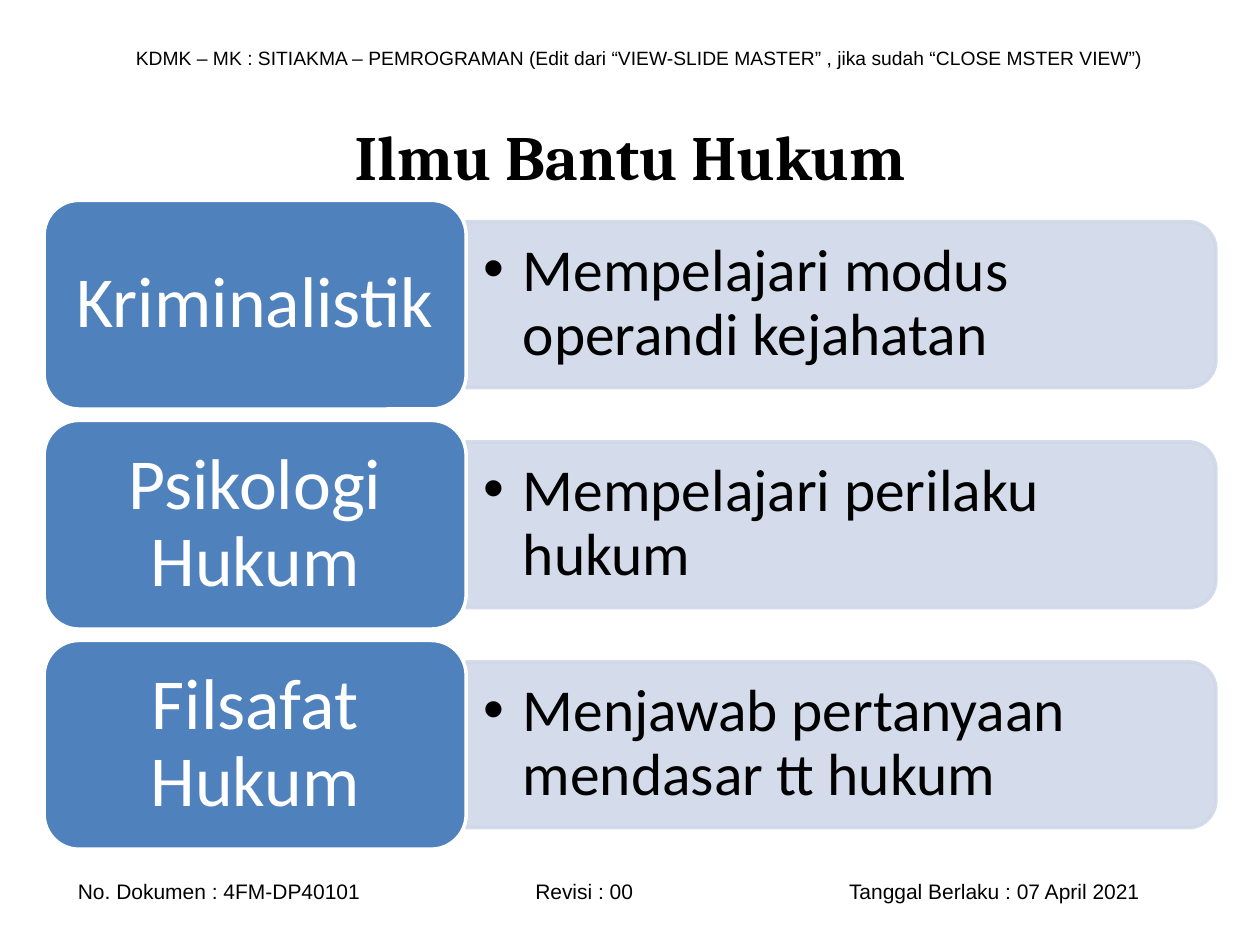
from dataclasses import dataclass

from lxml.etree import SubElement
from pptx import Presentation
from pptx.dml.color import RGBColor
from pptx.enum.shapes import MSO_SHAPE
from pptx.enum.text import MSO_ANCHOR, PP_ALIGN
from pptx.oxml.ns import qn
from pptx.util import Inches, Pt


@dataclass(frozen=True)
class Theme:
    """Colours, fonts and type sizes of the slide."""
    ink: str = "000000"
    paper: str = "FFFFFF"
    label: str = "4F81BD"
    panel: str = "D0D8E8"
    panel_alpha: int = 90
    plain: str = "Arial"
    heading: str = "Cambria"
    body: str = "Calibri"
    header_size: int = 11
    footer_size: int = 12
    title_size: int = 36
    detail_size: int = 34
    label_size: int = 41


THEME = Theme()


def write_text(s, text, *, font, size, color=THEME.ink, bold=False, align=PP_ALIGN.LEFT,
               margins=(0.1, 0.05), spacing=None, bullet=None, tabs=()):
    """Write one formatted paragraph, vertically centred, into a shape."""
    tf = s.text_frame
    tf.word_wrap = True
    tf.vertical_anchor = MSO_ANCHOR.MIDDLE
    tf.margin_left = tf.margin_right = Inches(margins[0])
    tf.margin_top = tf.margin_bottom = Inches(margins[1])
    p = tf.paragraphs[0]
    pPr = p._p.get_or_add_pPr()
    if bullet:
        pPr.set("marL", str(Inches(bullet)))
        pPr.set("indent", str(-Inches(bullet)))
        SubElement(pPr, qn("a:buFont"), typeface=THEME.plain)
        SubElement(pPr, qn("a:buChar"), char="•")
    if tabs:
        tab_list = SubElement(pPr, qn("a:tabLst"))
        for pos in tabs:
            SubElement(tab_list, qn("a:tab"), pos=str(Inches(pos)), algn="l")
    p.alignment = align
    if spacing:
        p.line_spacing = spacing
    r = p.add_run()
    r.text = text
    r.font.name, r.font.size, r.font.bold = font, Pt(size), bold
    r.font.color.rgb = RGBColor.from_string(color)


def add_text(slide, box, text, **fmt):
    """Add a text box at left, top, width, height in inches."""
    s = slide.shapes.add_textbox(*map(Inches, box))
    write_text(s, text, **fmt)


def add_block(slide, kind, box, fill, line, alpha=None):
    """Add a filled, outlined preset shape, optionally translucent."""
    s = slide.shapes.add_shape(kind, *map(Inches, box))
    s.shadow.inherit = False
    s.fill.solid()
    s.fill.fore_color.rgb = RGBColor.from_string(fill)
    s.line.color.rgb = RGBColor.from_string(line)
    s.line.width = Pt(2)
    if alpha:
        for clr in s._element.spPr.iter(qn("a:srgbClr")):
            SubElement(clr, qn("a:alpha"), val=str(alpha * 1000))
    return s


def add_panel(slide, box, text):
    """Add a panel rounded on its right side, with a bulleted detail."""
    left, top, width, height = box
    shift = (width - height) / 2
    s = add_block(slide, MSO_SHAPE.ROUND_2_SAME_RECTANGLE,
                  (left + shift, top - shift, height, width),
                  THEME.panel, THEME.panel, THEME.panel_alpha)
    s.rotation = 90
    add_text(slide, (left, top + 0.06, width - 0.07, height - 0.13), text,
             font=THEME.body, size=THEME.detail_size, margins=(0.14, 0.07),
             spacing=0.9, bullet=0.31)


def add_row(slide, box, label, detail):
    """Add a label block and, beside it, its detail panel."""
    left, top, width, height = box
    label_width, inset = 3.35, 0.17
    add_panel(slide, (left + label_width, top + inset, width - label_width,
                      height - 2 * inset), detail)
    s = add_block(slide, MSO_SHAPE.ROUNDED_RECTANGLE, (left, top, label_width, height),
                  THEME.label, THEME.paper)
    write_text(s, label, font=THEME.body, size=THEME.label_size, color=THEME.paper,
               align=PP_ALIGN.CENTER, margins=(0.17, 0.09), spacing=0.9)


def add_rows(slide, box, rows, gap=0.09):
    """Stack the rows evenly in the box."""
    left, top, width, height = box
    row_height = (height - gap * (len(rows) - 1)) / len(rows)
    for i, (label, detail) in enumerate(rows):
        add_row(slide, (left, top + i * (row_height + gap), width, row_height),
                label, detail)


def add_header(slide, box):
    """Add the course line at the top."""
    add_text(slide, box, "KDMK – MK : SITIAKMA – PEMROGRAMAN (Edit dari “VIEW-SLIDE MASTER” , "
             "jika sudah “CLOSE MSTER VIEW”)", font=THEME.plain, size=THEME.header_size)


def add_title(slide, box):
    """Add the slide title."""
    add_text(slide, box, "Ilmu Bantu Hukum", font=THEME.heading, size=THEME.title_size,
             bold=True, align=PP_ALIGN.CENTER)


def add_footer(slide, box):
    """Add the document line in three tabbed columns."""
    add_text(slide, box, "No. Dokumen : 4FM-DP40101\tRevisi : 00\t"
             "Tanggal Berlaku : 07 April 2021", font=THEME.plain,
             size=THEME.footer_size, tabs=(3.63, 6.12))


def main():
    """Build and save the slide."""
    prs = Presentation()
    prs.slide_width, prs.slide_height = Inches(10), Inches(7.5)
    slide = prs.slides.add_slide(prs.slide_layouts[6])
    add_header(slide, (0.98, 0.31, 8.35, 0.29))
    add_footer(slide, (0.52, 6.92, 9.13, 0.3))
    add_title(slide, (0.5, 0.61, 9, 1.25))
    add_rows(slide, (0.35, 1.59, 9.3, 5.15), [
        ("Kriminalistik", "Mempelajari modus operandi kejahatan"),
        ("Psikologi Hukum", "Mempelajari perilaku hukum"),
        ("Filsafat Hukum", "Menjawab pertanyaan mendasar tt hukum"),
    ])
    prs.save("out.pptx")


if __name__ == "__main__":
    main()
